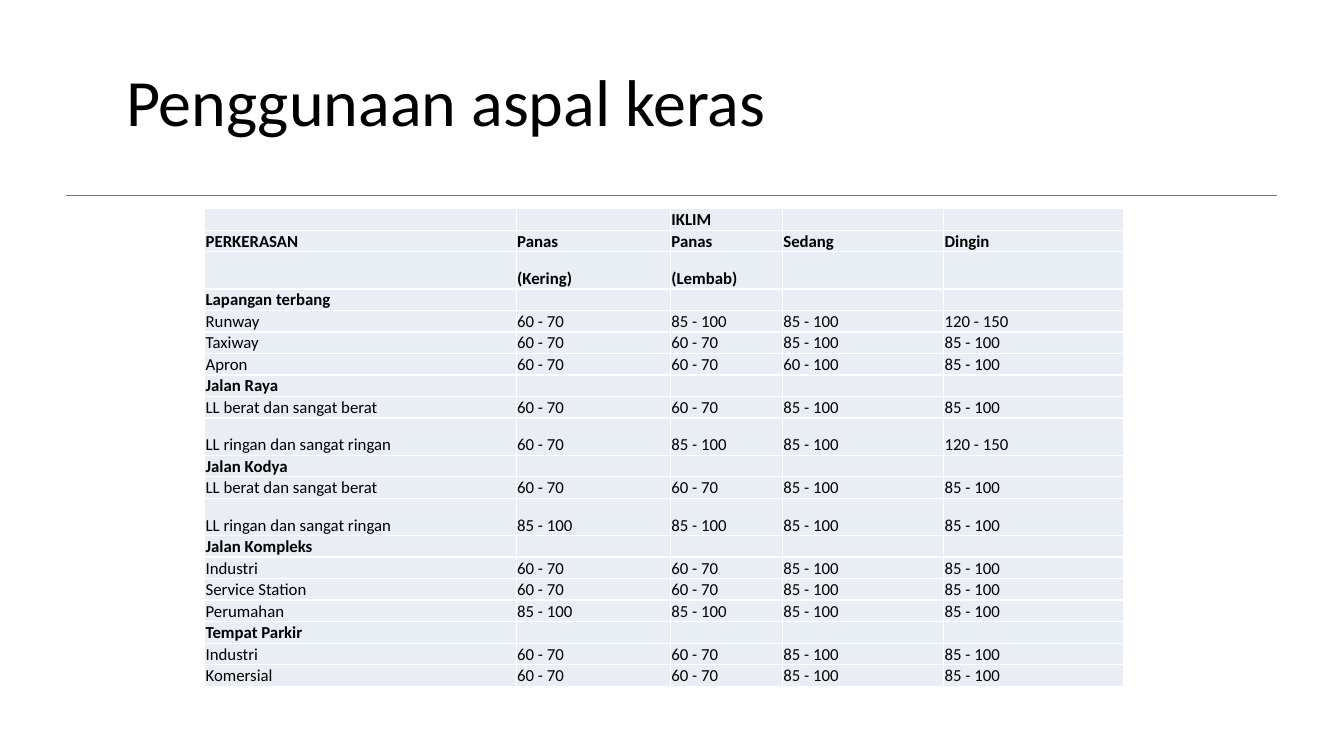
from dataclasses import dataclass

from lxml.etree import SubElement
from pptx import Presentation
from pptx.dml.color import RGBColor as RGB
from pptx.enum.shapes import MSO_CONNECTOR
from pptx.enum.text import MSO_ANCHOR, MSO_AUTO_SIZE, PP_ALIGN
from pptx.oxml.ns import qn
from pptx.util import Inches, Pt


@dataclass(frozen=True)
class Theme:
    font: str = "Calibri"
    text: RGB = RGB.from_string("000000")
    rule: RGB = RGB.from_string("4B7EBC")
    cell: RGB = RGB.from_string("E9EDF4")
    border: str = "FFFFFF"
    title_size: float = 47.2
    table_size: float = 12


THEME = Theme()

HEADINGS = [
    ("", "", "IKLIM", "", ""),
    ("PERKERASAN", "Panas", "Panas", "Sedang", "Dingin"),
    ("", "(Kering)", "(Lembab)", "", ""),
]
LOW, MID, HIGH = "60 - 70", "85 - 100", "120 - 150"
HEAVY, LIGHT = "LL berat dan sangat berat", "LL ringan dan sangat ringan"
PAVEMENTS = {
    "Lapangan terbang": [
        ("Runway", LOW, MID, MID, HIGH),
        ("Taxiway", LOW, LOW, MID, MID),
        ("Apron", LOW, LOW, "60 - 100", MID),
    ],
    "Jalan Raya": [
        (HEAVY, LOW, LOW, MID, MID),
        (LIGHT, LOW, MID, MID, HIGH),
    ],
    "Jalan Kodya": [
        (HEAVY, LOW, LOW, MID, MID),
        (LIGHT, MID, MID, MID, MID),
    ],
    "Jalan Kompleks": [
        ("Industri", LOW, LOW, MID, MID),
        ("Service Station", LOW, LOW, MID, MID),
        ("Perumahan", MID, MID, MID, MID),
    ],
    "Tempat Parkir": [
        ("Industri", LOW, LOW, MID, MID),
        ("Komersial", LOW, LOW, MID, MID),
    ],
}
COLUMN_WIDTHS = (3.09, 1.53, 1.11, 1.6, 1.78)
ROW_HEIGHT, TALL_ROW_HEIGHT = 0.21, 0.37


def style_font(font, size, bold=False):
    font.name = THEME.font
    font.size = Pt(size)
    font.bold = bold
    font.color.rgb = THEME.text


def add_title(slide, left, top, width, height):
    title = slide.shapes.title
    title.left, title.top = Inches(left), Inches(top)
    title.width, title.height = Inches(width), Inches(height)
    frame = title.text_frame
    frame.text = "Penggunaan aspal keras"
    frame.auto_size = MSO_AUTO_SIZE.NONE
    frame.vertical_anchor = MSO_ANCHOR.MIDDLE
    frame.margin_left = frame.margin_right = Inches(0.08)
    frame.margin_top = frame.margin_bottom = Inches(0.04)
    heading = frame.paragraphs[0]
    heading.alignment = PP_ALIGN.LEFT
    style_font(heading.font, THEME.title_size)


def add_rule(slide, left, top, width):
    rule = slide.shapes.add_connector(
        MSO_CONNECTOR.STRAIGHT,
        Inches(left), Inches(top), Inches(left + width), Inches(top),
    )
    rule.line.color.rgb = THEME.rule
    rule.line.width = Pt(0.75)
    SubElement(rule._element.spPr, qn("a:effectLst"))


def add_borders(cell):
    properties = cell._tc.get_or_add_tcPr()
    for side in ("a:lnL", "a:lnR", "a:lnT", "a:lnB"):
        border = SubElement(properties, qn(side), w=str(Pt(1)))
        fill = SubElement(border, qn("a:solidFill"))
        SubElement(fill, qn("a:srgbClr"), val=THEME.border)


def fill_cell(cell, wording, bold):
    add_borders(cell)
    cell.fill.solid()
    cell.fill.fore_color.rgb = THEME.cell
    cell.vertical_anchor = MSO_ANCHOR.BOTTOM
    cell.margin_left = cell.margin_right = cell.margin_top = Inches(0.01)
    cell.margin_bottom = 0
    cell.text = wording
    entry = cell.text_frame.paragraphs[0]
    style_font(entry.font, THEME.table_size, bold)
    if not wording:
        SubElement(entry._p, qn("a:endParaRPr"), sz=str(int(THEME.table_size * 100)))


def add_pavement_table(slide, left, top, width, height):
    rows = [(heading, True) for heading in HEADINGS]
    for group, uses in PAVEMENTS.items():
        rows.append(((group, "", "", "", ""), True))
        rows.extend((use, False) for use in uses)

    table = slide.shapes.add_table(
        len(rows), len(COLUMN_WIDTHS),
        Inches(left), Inches(top), Inches(width), Inches(height),
    ).table
    table.first_row = table.horz_banding = False
    for column, column_width in zip(table.columns, COLUMN_WIDTHS):
        column.width = Inches(column_width)
    for row, (wordings, bold) in zip(table.rows, rows):
        tall = wordings == HEADINGS[-1] or wordings[0] == LIGHT
        row.height = Inches(TALL_ROW_HEIGHT if tall else ROW_HEIGHT)
        for cell, wording in zip(row.cells, wordings):
            fill_cell(cell, wording, bold)


def main():
    deck = Presentation()
    deck.slide_width, deck.slide_height = Inches(13.33), Inches(7.5)
    slide = deck.slides.add_slide(deck.slide_layouts[5])
    add_rule(slide, 0.65, 1.94, 12.02)
    add_title(slide, 1.17, 0.46, 11, 1.06)
    add_pavement_table(slide, 2.03, 2.07, sum(COLUMN_WIDTHS), 4.66)
    deck.save("out.pptx")


if __name__ == "__main__":
    main()
